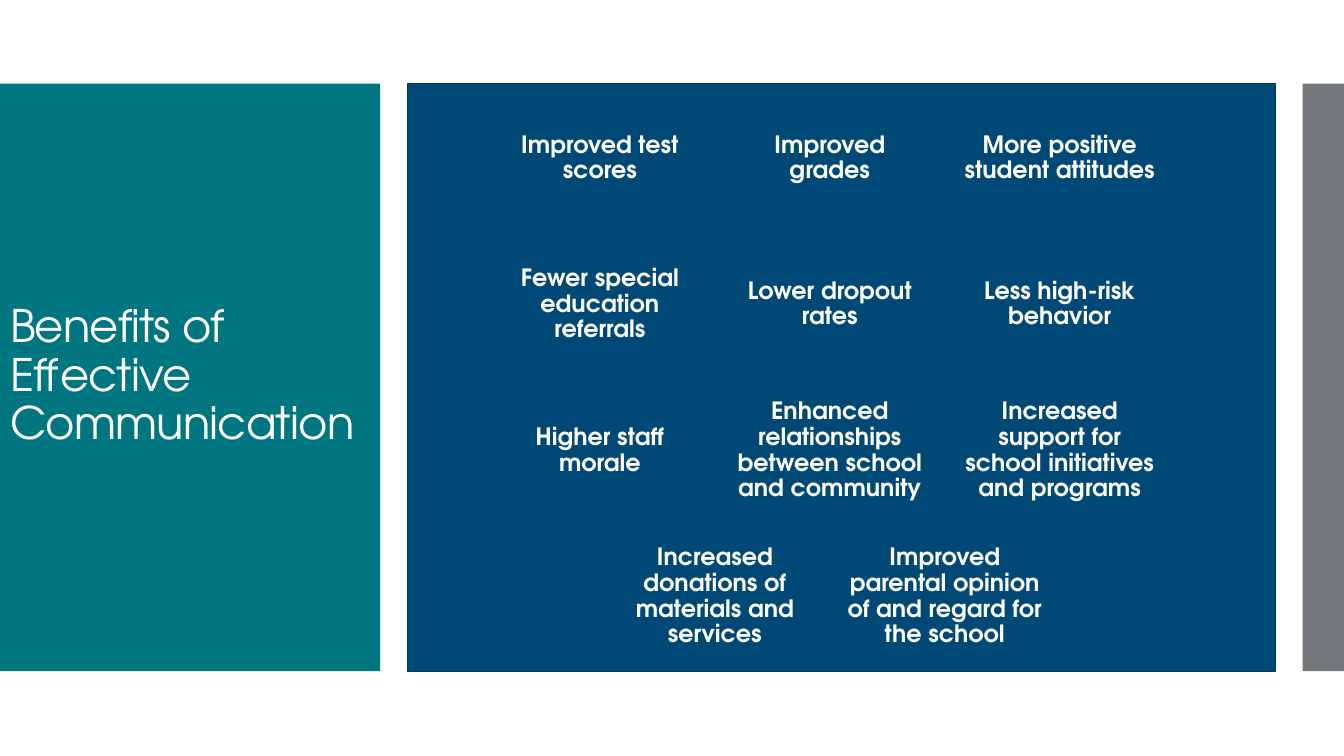
import pptx
import pptx.dml.color
import pptx.enum.shapes
import pptx.enum.text
import pptx.util
from pptx.util import Inches

FONT = "TeX Gyre Adventor"
WHITE, NAVY, NAVY_EDGE, TEAL, GRAY = "FFFFFF", "004976", "003657", "007681", "75787B"
PANEL_TOP, PANEL_HEIGHT = 0.83, 5.83
BENEFIT_ROWS = [
    ["Improved test scores", "Improved grades", "More positive student attitudes"],
    ["Fewer special education referrals", "Lower dropout rates", "Less high-risk behavior"],
    ["Higher staff morale", "Enhanced relationships between school and community",
     "Increased support for school initiatives and programs"],
    ["Increased donations of materials and services",
     "Improved parental opinion of and regard for the school"],
]


def color(value):
    """Return the colour for a hex string."""
    return pptx.dml.color.RGBColor.from_string(value)


def add_rectangle(slide, left, top, width, height, fill, line=None):
    """Add a flat rectangle, outlined only when a line colour is given."""
    shape = slide.shapes.add_shape(
        pptx.enum.shapes.MSO_SHAPE.RECTANGLE,
        Inches(left), Inches(top), Inches(width), Inches(height))
    shape.shadow.inherit = False
    shape.fill.solid()
    shape.fill.fore_color.rgb = color(fill)
    if line:
        shape.line.color.rgb = color(line)
        shape.line.width = pptx.util.Pt(0.85)
    else:
        shape.line.fill.background()
    return shape


def format_paragraph(paragraph, size, alignment, bold):
    """Apply the white slide font to a paragraph."""
    paragraph.alignment = alignment
    paragraph.line_spacing = 0.9
    paragraph.font.name = FONT
    paragraph.font.size = pptx.util.Pt(size)
    paragraph.font.bold = bold
    paragraph.font.color.rgb = color(WHITE)


def add_title_panel(slide, left, top, width, height):
    """Draw the teal panel with the slide title above it."""
    add_rectangle(slide, left, top, width, height, TEAL)
    title = slide.shapes.title
    title.left, title.top = Inches(left), Inches(top + 0.42)
    title.width, title.height = Inches(width + 0.02), Inches(3.26)
    frame = title.text_frame
    frame.text = "Benefits of Effective Communication"
    frame.word_wrap = True
    frame.auto_size = pptx.enum.text.MSO_AUTO_SIZE.NONE
    frame.vertical_anchor = pptx.enum.text.MSO_ANCHOR.BOTTOM
    paragraph = frame.paragraphs[0]
    format_paragraph(paragraph, 32, pptx.enum.text.PP_ALIGN.LEFT, False)
    paragraph.runs[0]._r.get_or_add_rPr().set("spc", "-60")
    title._element.getparent().append(title._element)


def add_benefit(slide, left, top, width, height, text):
    """Add one benefit tile."""
    frame = add_rectangle(slide, left, top, width, height, NAVY).text_frame
    frame.text = text
    frame.word_wrap = True
    frame.vertical_anchor = pptx.enum.text.MSO_ANCHOR.MIDDLE
    frame.margin_left = frame.margin_right = Inches(0.07)
    frame.margin_top = frame.margin_bottom = Inches(0.07)
    format_paragraph(frame.paragraphs[0], 17, pptx.enum.text.PP_ALIGN.CENTER, True)


def add_benefits_panel(slide, left, top, width, height):
    """Draw the navy panel with centred rows of benefits."""
    add_rectangle(slide, left, top, width, height, NAVY, NAVY_EDGE)
    tile_width, tile_height, gap = 2.07, 1.24, 0.21
    center = left + 4.19
    for row_index, row in enumerate(BENEFIT_ROWS):
        row_width = len(row) * (tile_width + gap) - gap
        row_top = top + 0.12 + row_index * (tile_height + gap)
        for column, text in enumerate(row):
            tile_left = center - row_width / 2 + column * (tile_width + gap)
            add_benefit(slide, tile_left, row_top, tile_width, tile_height, text)


def main():
    """Build and save the presentation."""
    presentation = pptx.Presentation()
    presentation.slide_width, presentation.slide_height = Inches(13.33), Inches(7.5)
    slide = presentation.slides.add_slide(presentation.slide_layouts[5])
    add_title_panel(slide, 0, PANEL_TOP, 3.77, PANEL_HEIGHT)
    add_benefits_panel(slide, 4.04, PANEL_TOP, 8.61, PANEL_HEIGHT)
    add_rectangle(slide, 12.92, PANEL_TOP, 0.41, PANEL_HEIGHT, GRAY)
    presentation.save("out.pptx")


if __name__ == "__main__":
    main()
